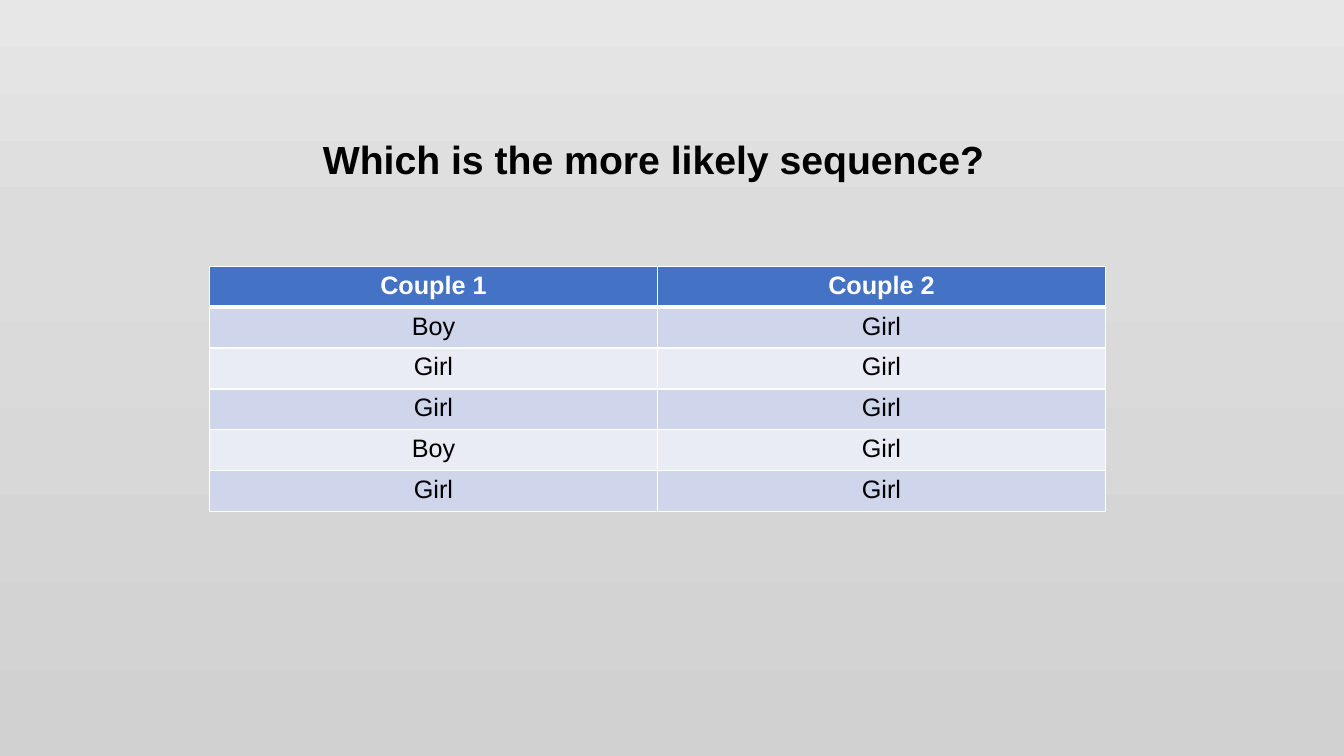
from copy import deepcopy

from lxml import etree
from pptx import Presentation
from pptx.dml.color import RGBColor
from pptx.enum.text import MSO_ANCHOR, MSO_AUTO_SIZE, PP_ALIGN
from pptx.oxml.ns import qn
from pptx.util import Cm, Pt

CENTER = PP_ALIGN.CENTER
MIDDLE = MSO_ANCHOR.MIDDLE
GROW_TO_TEXT = MSO_AUTO_SIZE.SHAPE_TO_FIT_TEXT

FONT = "Arial"
BLACK, WHITE = "000000", "FFFFFF"
HEADER_FILL = "4472C4"
BAND_FILLS = ("CFD5EA", "E9EBF5")
BACKGROUND_STOPS = ((0, "E8E7E7"), (0.31, "DDDCDC"), (1, "D2D1D1"))

BIRTHS = (
    ("Couple 1", "Couple 2"),
    ("Boy", "Girl"),
    ("Girl", "Girl"),
    ("Girl", "Girl"),
    ("Boy", "Girl"),
    ("Girl", "Girl"),
)


def color(hex_value):
    return RGBColor.from_string(hex_value)


def write(paragraph, text, size, hex_value, bold):
    paragraph.alignment = CENTER
    run = paragraph.add_run()
    run.text = text
    run.font.name = FONT
    run.font.size = Pt(size)
    run.font.bold = bold
    run.font.color.rgb = color(hex_value)


def set_background(slide):
    fill = slide.background.fill
    fill.gradient()
    fill.gradient_angle = 270  # counter-clockwise: runs from top to bottom
    stop_list = slide.element.find(".//" + qn("a:gsLst"))
    stop_list.append(deepcopy(stop_list[-1]))
    for stop, (position, hex_value) in zip(fill.gradient_stops, BACKGROUND_STOPS):
        stop.position = position
        stop.color.rgb = color(hex_value)


def set_borders(cell, top, bottom):
    properties = cell._tc.get_or_add_tcPr()
    for side, width in (("L", 1), ("R", 1), ("T", top), ("B", bottom)):
        line = etree.SubElement(properties, qn(f"a:ln{side}"), w=str(Pt(width)))
        fill = etree.SubElement(line, qn("a:solidFill"))
        etree.SubElement(fill, qn("a:srgbClr"), val=WHITE)


def add_title(slide, left, top, width, height):
    frame = slide.shapes.add_textbox(left, top, width, height).text_frame
    frame.word_wrap = True
    frame.auto_size = GROW_TO_TEXT
    frame.vertical_anchor = MIDDLE
    write(frame.paragraphs[0], "Which is the more likely sequence?", 28, BLACK, True)


def add_births_table(slide, left, top, width, height):
    rows, columns = len(BIRTHS), len(BIRTHS[0])
    table = slide.shapes.add_table(rows, columns, left, top, width, height).table
    for row, values in enumerate(BIRTHS):
        is_header = row == 0
        for column, text in enumerate(values):
            cell = table.cell(row, column)
            # A thick rule separates the header from the body
            set_borders(cell, top=3 if row == 1 else 1, bottom=3 if is_header else 1)
            cell.fill.solid()
            cell.fill.fore_color.rgb = color(
                HEADER_FILL if is_header else BAND_FILLS[(row - 1) % 2])
            write(cell.text_frame.paragraphs[0], text, 18,
                  WHITE if is_header else BLACK, is_header)


def main():
    presentation = Presentation()
    presentation.slide_width, presentation.slide_height = Cm(33.87), Cm(19.05)
    slide = presentation.slides.add_slide(presentation.slide_layouts[6])
    set_background(slide)
    add_births_table(slide, Cm(5.28), Cm(6.71), Cm(22.58), Cm(6.18))
    add_title(slide, Cm(5.08), Cm(3.28), Cm(22.78), Cm(1.45))
    presentation.save("out.pptx")


if __name__ == "__main__":
    main()
